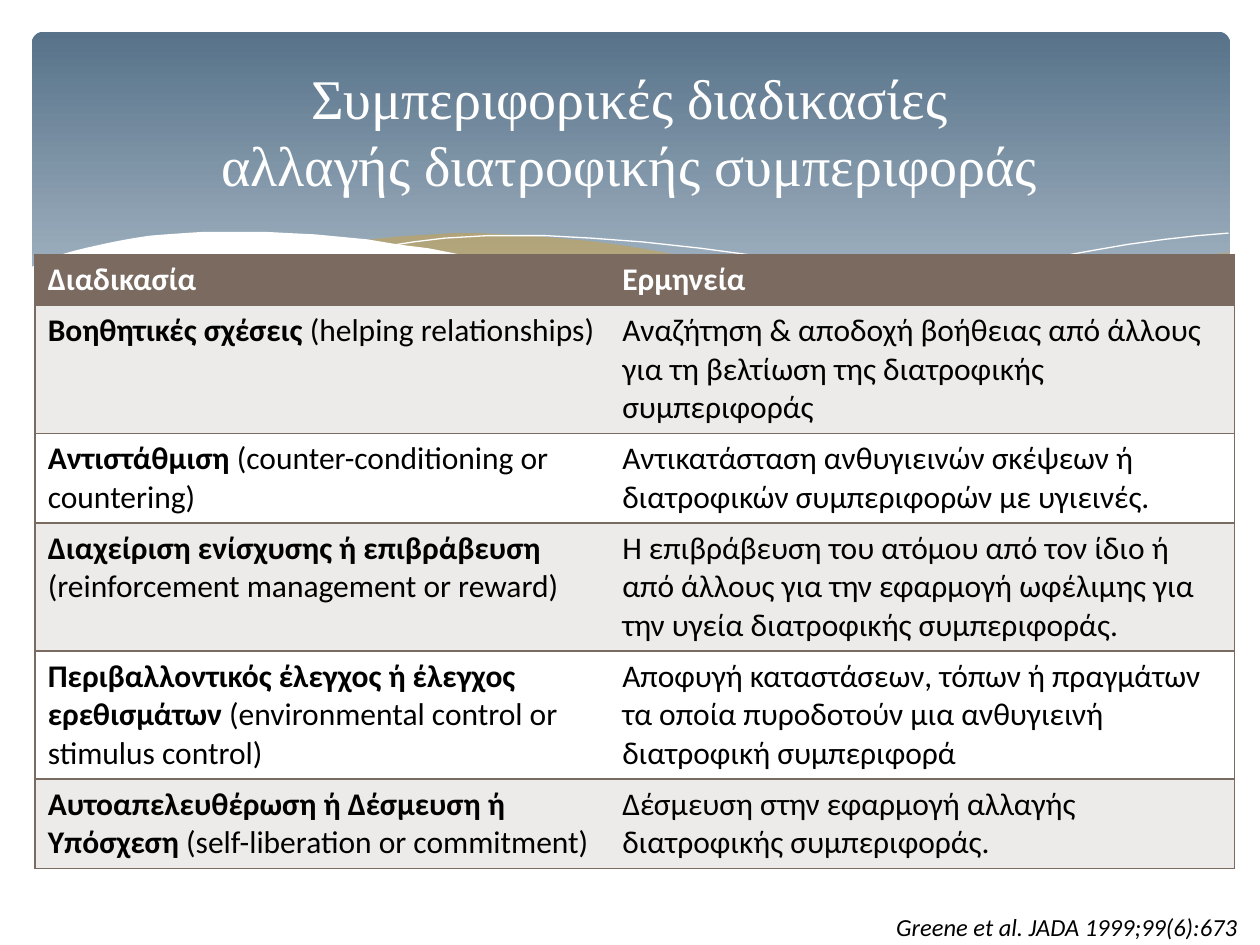
from lxml.etree import SubElement
from pptx import Presentation
from pptx.dml.color import RGBColor
from pptx.enum.shapes import MSO_SHAPE
from pptx.enum.text import MSO_ANCHOR, MSO_AUTO_SIZE, PP_ALIGN
from pptx.oxml.ns import qn
from pptx.util import Cm, Pt


def rgb(value):
    return RGBColor.from_string(value)


def add_run(p, text, size, font, color, bold=False, italic=False):
    r = p.add_run()
    r.text = text
    r.font.size = Pt(size)
    r.font.name = font
    r.font.color.rgb = rgb(color)
    r.font.bold = bold
    r.font.italic = italic


prs = Presentation()
prs.slide_width = Cm(25.4)
prs.slide_height = Cm(19.05)
s = prs.slides.add_slide(prs.slide_layouts[5])

banner = s.shapes.add_shape(MSO_SHAPE.ROUNDED_RECTANGLE, Cm(0.64), Cm(0.64), Cm(24.16), Cm(6.86))
banner.adjustments[0] = 0.034
banner.shadow.inherit = False
banner.line.fill.background()
banner.fill.gradient()
banner.fill.gradient_angle = 270
for stop, position, color in zip(banner.fill.gradient_stops, (0, 0.9), ("577289", "B2C1CE")):
    stop.position = position
    stop.color.rgb = rgb(color)

# Wave points are in hundredths of an inch.
right_wave = [
    (975, 200), (948, 204), (921, 210), (891, 216), (861, 223), (805, 237), (753, 248),
    (706, 257), (661, 265), (691, 269), (719, 272), (745, 275), (781, 277), (814, 278),
    (844, 277), (872, 274), (897, 270), (921, 265), (942, 259), (963, 252), (976, 247), (976, 200),
]
middle_wave = [
    (893, 273), (866, 269), (807, 260), (741, 247), (668, 231), (629, 222), (598, 214),
    (569, 208), (541, 203), (514, 198), (489, 194), (465, 191), (442, 189), (420, 187),
    (399, 186), (380, 185), (361, 185), (344, 186), (328, 187), (313, 188), (286, 191),
    (323, 196), (362, 203), (404, 211), (449, 222), (530, 240), (601, 255), (665, 266),
    (722, 274), (773, 277), (807, 278), (848, 277), (876, 275),
]
long_line = [
    (309, 195), (328, 192), (353, 189), (387, 187), (433, 187), (469, 189), (510, 192),
    (556, 197), (608, 204), (665, 213), (727, 226), (795, 241), (869, 261), (907, 272),
]
short_line = [
    (613, 257), (653, 246), (695, 235), (748, 223), (806, 210), (866, 199), (895, 194),
    (924, 190), (951, 187), (975, 185),
]
white_wave = [
    (977, 246), (950, 256), (920, 265), (887, 271), (850, 275), (809, 277), (761, 275),
    (708, 270), (648, 262), (579, 250), (503, 233), (447, 220), (391, 207), (340, 197),
    (316, 194), (292, 190), (271, 188), (250, 186), (230, 185), (211, 184), (177, 184),
    (161, 184), (146, 185), (132, 186), (119, 187), (106, 189), (95, 191), (85, 193),
    (76, 195), (67, 197), (59, 199), (52, 201), (46, 203), (40, 205), (36, 207), (29, 210),
    (23, 213), (23, 329), (977, 329),
]
waves = [
    (right_wave, "DC9E1F", 29),
    (middle_wave, "DC9E1F", 40),
    (long_line, None, None),
    (short_line, None, None),
    (white_wave, "FFFFFF", 100),
]
for points, color, opacity in waves:
    builder = s.shapes.build_freeform(*points[0], scale=Cm(2.54) / 100)
    builder.add_line_segments(points[1:], close=color is not None)
    sp = builder.convert_to_shape()
    sp.shadow.inherit = False
    if color is None:
        sp.fill.background()
        sp.line.color.rgb = rgb("FFFFFF")
        sp.line.width = Pt(0)
        continue
    sp.line.fill.background()
    sp.fill.solid()
    sp.fill.fore_color.rgb = rgb(color)
    if opacity < 100:
        clr = sp.element.spPr.find(qn("a:solidFill"))[0]
        SubElement(clr, qn("a:alpha"), val=str(opacity * 1000))

rows = [
    ("Διαδικασία", "", "Ερμηνεία"),
    ("Βοηθητικές σχέσεις ", "(helping relationships)",
     "Αναζήτηση & αποδοχή βοήθειας από άλλους για τη βελτίωση της διατροφικής συμπεριφοράς"),
    ("Αντιστάθμιση ", "(counter-conditioning or countering)",
     "Αντικατάσταση ανθυγιεινών σκέψεων ή διατροφικών συμπεριφορών με υγιεινές."),
    ("Διαχείριση ενίσχυσης ή επιβράβευση ", "(reinforcement management or reward)",
     "Η επιβράβευση του ατόμου από τον ίδιο ή από άλλους για την εφαρμογή ωφέλιμης "
     "για την υγεία διατροφικής συμπεριφοράς."),
    ("Περιβαλλοντικός έλεγχος ή έλεγχος ερεθισμάτων ", "(environmental control or stimulus control)",
     "Αποφυγή καταστάσεων, τόπων ή πραγμάτων τα οποία πυροδοτούν μια ανθυγιεινή "
     "διατροφική συμπεριφορά"),
    ("Αυτοαπελευθέρωση ή Δέσμευση ή Υπόσχεση ", "(self-liberation or commitment)",
     "Δέσμευση στην εφαρμογή αλλαγής διατροφικής συμπεριφοράς."),
]
table = s.shapes.add_table(len(rows), 2, Cm(0.71), Cm(5.13), Cm(24.18), Cm(6.18)).table
table.columns[0].width = Cm(11.58)
table.columns[1].width = Cm(12.6)
for i, (term, english, meaning) in enumerate(rows):
    table.rows[i].height = Cm(1.03)
    header = i == 0
    fill = "7A6A60" if header else ("ECEBEA" if i % 2 else "FFFFFF")
    color = "FFFFFF" if header else "000000"
    contents = [[(term, True), (english, False)], [(meaning, header)]]
    for j, runs in enumerate(contents):
        cell = table.cell(i, j)
        p = cell.text_frame.paragraphs[0]
        for text, bold in runs:
            if text:
                add_run(p, text, 18, "Calibri", color, bold)
        tc_pr = cell._tc.get_or_add_tcPr()
        inner_side = "R" if j == 0 else "L"
        for side in "LRTB":
            ln = SubElement(tc_pr, qn(f"a:ln{side}"), w=str(Pt(1)))
            if side == inner_side:
                SubElement(ln, qn("a:noFill"))
            else:
                solid = SubElement(ln, qn("a:solidFill"))
                SubElement(solid, qn("a:srgbClr"), val="7A6A60")
        cell.fill.solid()
        cell.fill.fore_color.rgb = rgb(fill)

title = s.shapes.title
title.left, title.top, title.width, title.height = Cm(2.74), Cm(1.04), Cm(19.91), Cm(3.18)
title.element.getparent().append(title.element)
tf = title.text_frame
tf.word_wrap = True
tf.vertical_anchor = MSO_ANCHOR.MIDDLE
p = tf.paragraphs[0]
p.alignment = PP_ALIGN.CENTER
add_run(p, "Συμπεριφορικές διαδικασίες", 32, "Times New Roman", "FFFFFF")
p.add_line_break()
add_run(p, "αλλαγής διατροφικής συμπεριφοράς", 32, "Times New Roman", "FFFFFF")

source = s.shapes.add_textbox(Cm(11.1), Cm(18.26), Cm(14.1), Cm(0.86))
tf = source.text_frame
tf.word_wrap = True
tf.auto_size = MSO_AUTO_SIZE.SHAPE_TO_FIT_TEXT
p = tf.paragraphs[0]
p.alignment = PP_ALIGN.RIGHT
add_run(p, "Greene et al. JADA 1999;99(6):673", 14, "Calibri", "000000", italic=True)

prs.save("out.pptx")
